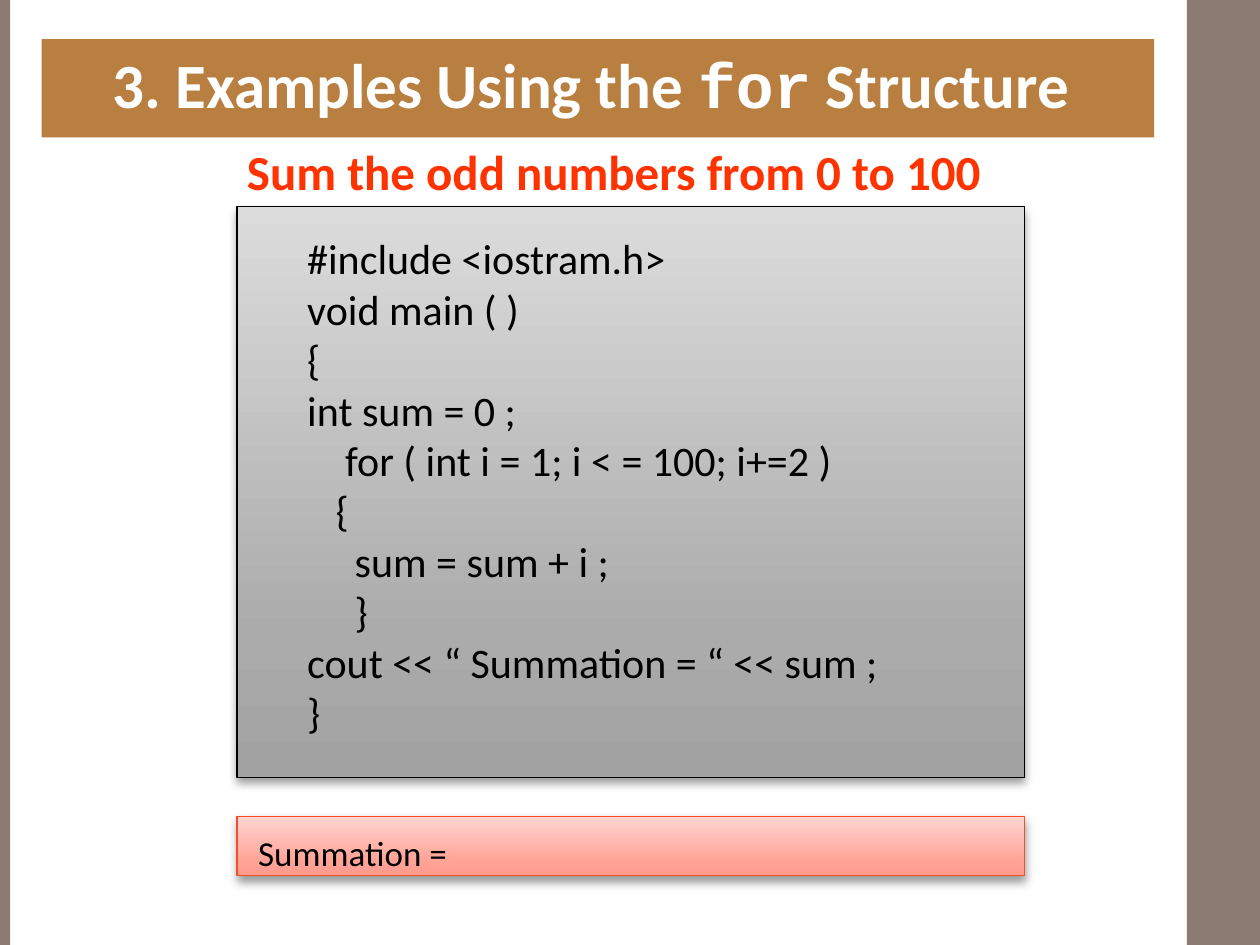
from copy import deepcopy
from dataclasses import dataclass

from lxml.etree import fromstring
from pptx import Presentation
from pptx.dml.color import RGBColor
from pptx.enum.shapes import MSO_SHAPE
from pptx.enum.text import MSO_ANCHOR, PP_ALIGN
from pptx.util import Inches, Pt


@dataclass(frozen=True)
class Theme:
    """Colours, fonts and type sizes of the slide."""
    side: str = "8C7B70"
    banner: str = "B87F40"
    white: str = "FFFFFF"
    black: str = "000000"
    accent: str = "FF3300"
    output_line: str = "F34E27"
    code_gradient: tuple = ("A2A2A2", "ABABAB", "DCDCDC")
    output_gradient: tuple = ("FF9A8C", "FFA397", "FFD6D2")
    font: str = "Calibri"
    code_font: str = "Courier New"
    title_size: int = 36
    subtitle_size: int = 28
    code_size: int = 24
    output_size: int = 20


THEME = Theme()
STOPS = (0, 0.25, 1)
SHADOW = """<a:effectLst xmlns:a="http://schemas.openxmlformats.org/drawingml/2006/main">
<a:outerShdw blurRad="66040" dist="38100" dir="5400000" rotWithShape="0">
<a:srgbClr val="000000"><a:alpha val="40000"/></a:srgbClr></a:outerShdw></a:effectLst>"""
CODE = """#include <iostram.h>
void main ( )
{
int sum = 0 ;
    for ( int i = 1; i < = 100; i+=2 )
   {
     sum = sum + i ;
     }
cout << “ Summation = “ << sum ;
}"""


def add_bar(page, left, top, width, height, color):
    """Add a plain filled rectangle."""
    bar = page.shapes.add_shape(MSO_SHAPE.RECTANGLE, Inches(left), Inches(top),
                                Inches(width), Inches(height))
    bar.shadow.inherit = False
    bar.fill.solid()
    bar.fill.fore_color.rgb = RGBColor.from_string(color)
    bar.line.fill.background()
    return bar


def add_panel(page, left, top, width, height, colors, line):
    """Add an outlined rectangle with an upward gradient and a soft shadow."""
    panel = add_bar(page, left, top, width, height, colors[0])
    panel.fill.gradient()
    panel.fill.gradient_angle = 90
    stop_list = panel.fill._fill._gradFill.gsLst
    stop_list.insert(1, deepcopy(stop_list[0]))
    for stop, position, color in zip(panel.fill.gradient_stops, STOPS, colors):
        stop.position = position
        stop.color.rgb = RGBColor.from_string(color)
    panel.line.color.rgb = RGBColor.from_string(line)
    panel.line.width = Pt(0.75)
    properties = panel._element.spPr
    effects = properties.find("{*}effectLst")
    properties.replace(effects, fromstring(SHADOW))


def write_text(box, text, size, color=THEME.black, bold=False,
               align=PP_ALIGN.LEFT, anchor=MSO_ANCHOR.TOP, code_word=None):
    """Write lines of text, setting an optional word in the code font."""
    frame = box.text_frame
    frame.word_wrap = True
    frame.vertical_anchor = anchor
    for index, line in enumerate(text.split("\n")):
        para = frame.add_paragraph() if index else frame.paragraphs[0]
        para.alignment = align
        before, word, after = line.partition(code_word) if code_word else (line, "", "")
        for part, font in ((before, THEME.font), (word, THEME.code_font), (after, THEME.font)):
            if part:
                span = para.add_run()
                span.text = part
                span.font.name = font
                span.font.size = Pt(size)
                span.font.bold = bold
                span.font.color.rgb = RGBColor.from_string(color)


def add_text(page, left, top, width, height, text, **style):
    """Add a text box and write into it."""
    box = page.shapes.add_textbox(Inches(left), Inches(top), Inches(width), Inches(height))
    write_text(box, text, **style)


def main():
    """Build and save the slide."""
    deck = Presentation()
    deck.slide_width, deck.slide_height = Inches(10), Inches(7.5)
    page = deck.slides.add_slide(deck.slide_layouts[6])
    add_bar(page, 9.42, 0, 0.58, 7.5, THEME.side)
    add_bar(page, 0, 0, 0.08, 7.5, THEME.side)
    banner = add_bar(page, 0.33, 0.31, 8.83, 0.78, THEME.banner)
    write_text(banner, "3. Examples Using the for Structure ", size=THEME.title_size,
               color=THEME.white, bold=True, align=PP_ALIGN.CENTER, code_word="for")
    add_text(page, 0.62, 1.02, 8.5, 0.68, "Sum the odd numbers from 0 to 100",
             size=THEME.subtitle_size, color=THEME.accent, bold=True,
             align=PP_ALIGN.CENTER, anchor=MSO_ANCHOR.MIDDLE)
    add_panel(page, 1.88, 1.64, 6.25, 4.53, THEME.code_gradient, THEME.black)
    add_panel(page, 1.88, 6.48, 6.25, 0.47, THEME.output_gradient, THEME.output_line)
    add_text(page, 1.95, 6.55, 6.09, 0.44, "Summation =", size=THEME.output_size)
    add_text(page, 2.34, 1.8, 5.16, 4.14, CODE, size=THEME.code_size)
    deck.save("out.pptx")


if __name__ == "__main__":
    main()
